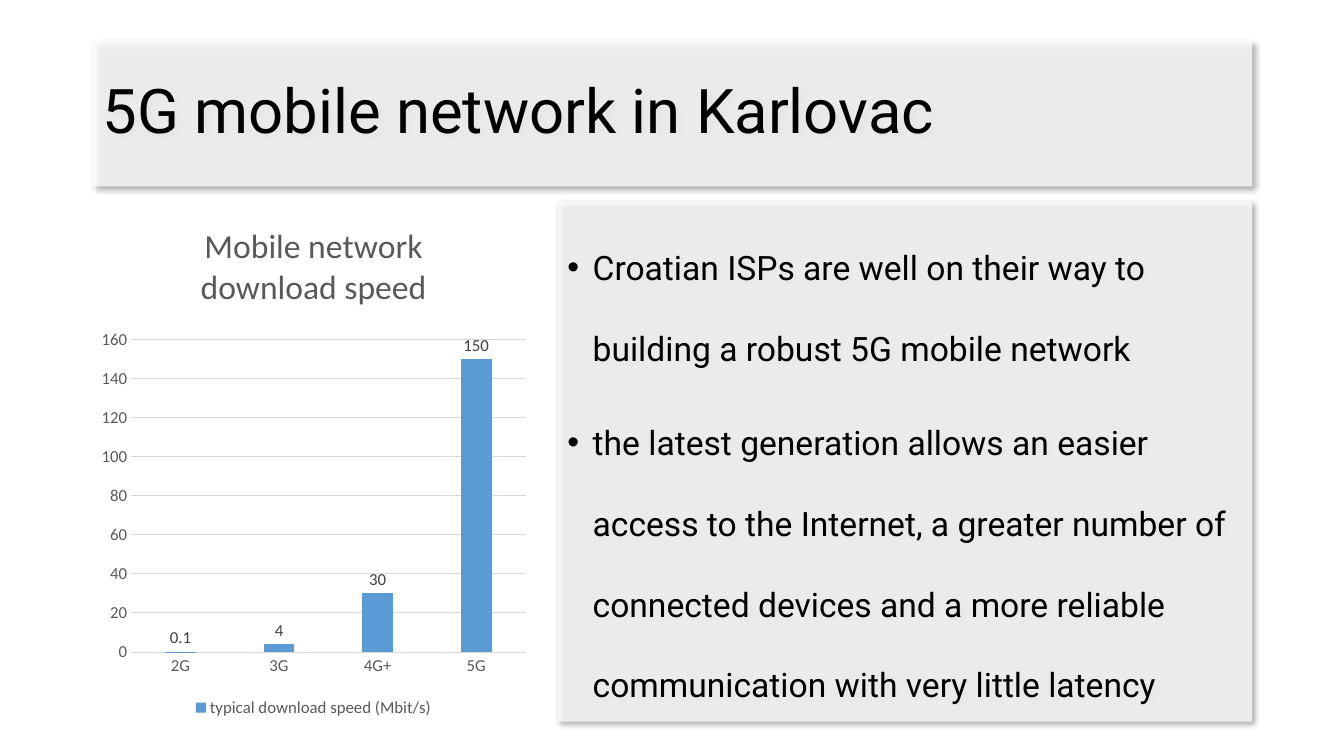
from lxml import etree
from pptx import Presentation
from pptx.chart.data import CategoryChartData
from pptx.dml.color import RGBColor
from pptx.enum.chart import XL_CHART_TYPE, XL_LABEL_POSITION, XL_LEGEND_POSITION, XL_TICK_MARK
from pptx.enum.text import MSO_ANCHOR, MSO_AUTO_SIZE, PP_ALIGN
from pptx.oxml import parse_xml
from pptx.oxml.ns import nsdecls, qn
from pptx.util import Inches, Pt

COLUMN = XL_CHART_TYPE.COLUMN_CLUSTERED
BOTTOM = XL_LEGEND_POSITION.BOTTOM
ABOVE = XL_LABEL_POSITION.OUTSIDE_END
NO_TICK = XL_TICK_MARK.NONE
LEFT = PP_ALIGN.LEFT
MIDDLE, TOP = MSO_ANCHOR.MIDDLE, MSO_ANCHOR.TOP
NO_FIT = MSO_AUTO_SIZE.NONE

COLORS = {"text": "000000", "panel": "FFFFFF", "bar": "5B9BD5",
          "gray": "595959", "label": "404040", "grid": "D9D9D9"}
SPEEDS = {"2G": 0.1, "3G": 4, "4G+": 30, "5G": 150}
POINTS = [
    "Croatian ISPs are well on their way to building a robust 5G mobile network",
    "the latest generation allows an easier access to the Internet, a greater number of "
    "connected devices and a more reliable communication with very little latency",
]


def color(name):
    return RGBColor.from_string(COLORS[name])


def style(font, size, name="gray", face="Calibri"):
    font.size, font.name, font.bold = Pt(size), face, False
    font.color.rgb = color(name)


def write(par, text, size=24, lines=1.0, before=0, bullet=False):
    """Fill a paragraph with text in the slide's main face."""
    par.alignment, par.line_spacing = LEFT, lines
    par.space_before = Pt(before)
    if bullet:
        props = par._p.get_or_add_pPr()
        props.set("marL", str(Inches(0.25)))
        props.set("indent", str(-Inches(0.25)))
        etree.SubElement(props, qn("a:buFont")).set("typeface", "Arial")
        etree.SubElement(props, qn("a:buChar")).set("char", "•")
    run = par.add_run()
    run.text = text
    style(run.font, size, "text", "Roboto")


def panel(shape, box, anchor):
    """Place a translucent white panel with a soft shadow."""
    shape.left, shape.top, shape.width, shape.height = map(Inches, box)
    shape.fill.solid()
    shape.fill.fore_color.rgb = color("panel")
    props = shape._element.spPr
    tint = props.find(qn("a:solidFill"))[0]
    etree.SubElement(tint, qn("a:alpha")).set("val", "75000")
    props.append(parse_xml(
        f'<a:effectLst {nsdecls("a")}><a:outerShdw blurRad="{Pt(4)}" dist="{Pt(3)}" '
        'dir="2700000" algn="tl" rotWithShape="0"><a:srgbClr val="000000">'
        '<a:alpha val="40000"/></a:srgbClr></a:outerShdw></a:effectLst>'))
    frame = shape.text_frame
    frame.word_wrap, frame.auto_size = True, NO_FIT
    frame.vertical_anchor = anchor
    return frame


def add_title(slide, box):
    frame = panel(slide.shapes.title, box, MIDDLE)
    write(frame.paragraphs[0], "5G mobile network in Karlovac", size=44, lines=0.9)


def add_points(slide, box):
    frame = panel(slide.shapes.add_textbox(*map(Inches, box)), box, TOP)
    for i, text in enumerate(POINTS):
        par = frame.add_paragraph() if i else frame.paragraphs[0]
        write(par, text, lines=2.0, before=10 if i else 0, bullet=True)


def add_speeds(slide, box):
    data = CategoryChartData()
    data.categories = list(SPEEDS)
    data.add_series("typical download speed (Mbit/s)", list(SPEEDS.values()))
    chart = slide.shapes.add_chart(COLUMN, *map(Inches, box), data).chart
    style(chart.font, 12)

    # Title and legend
    chart.has_title = True
    par = chart.chart_title.text_frame.paragraphs[0]
    run = par.add_run()
    run.text = "Mobile network download speed"
    style(run.font, 24)
    chart.has_legend = True
    chart.legend.position = BOTTOM
    chart.legend.include_in_layout = False
    style(chart.legend.font, 12)

    # Axes
    cats, vals = chart.category_axis, chart.value_axis
    for axis in (cats, vals):
        axis.major_tick_mark = axis.minor_tick_mark = NO_TICK
        style(axis.tick_labels.font, 12)
    vals.format.line.fill.background()
    vals.has_major_gridlines = True
    for part in (cats, vals.major_gridlines):
        part.format.line.width = Pt(0.75)
        part.format.line.color.rgb = color("grid")

    # Columns and their values
    plot = chart.plots[0]
    plot.vary_by_categories = False
    plot.gap_width, plot.overlap = 219, -27
    bars = plot.series[0]
    bars.format.fill.solid()
    bars.format.fill.fore_color.rgb = color("bar")
    labels = bars.data_labels
    labels.show_value, labels.position = True, ABOVE
    style(labels.font, 12, "label")


def main():
    deck = Presentation()
    deck.slide_width, deck.slide_height = Inches(13.33), Inches(7.5)
    slide = deck.slides.add_slide(deck.slide_layouts[5])
    add_title(slide, (0.92, 0.4, 11.5, 1.45))
    add_speeds(slide, (0.92, 2, 4.38, 5.16))
    add_points(slide, (5.53, 2, 6.89, 5.16))
    deck.save("out.pptx")


if __name__ == "__main__":
    main()
